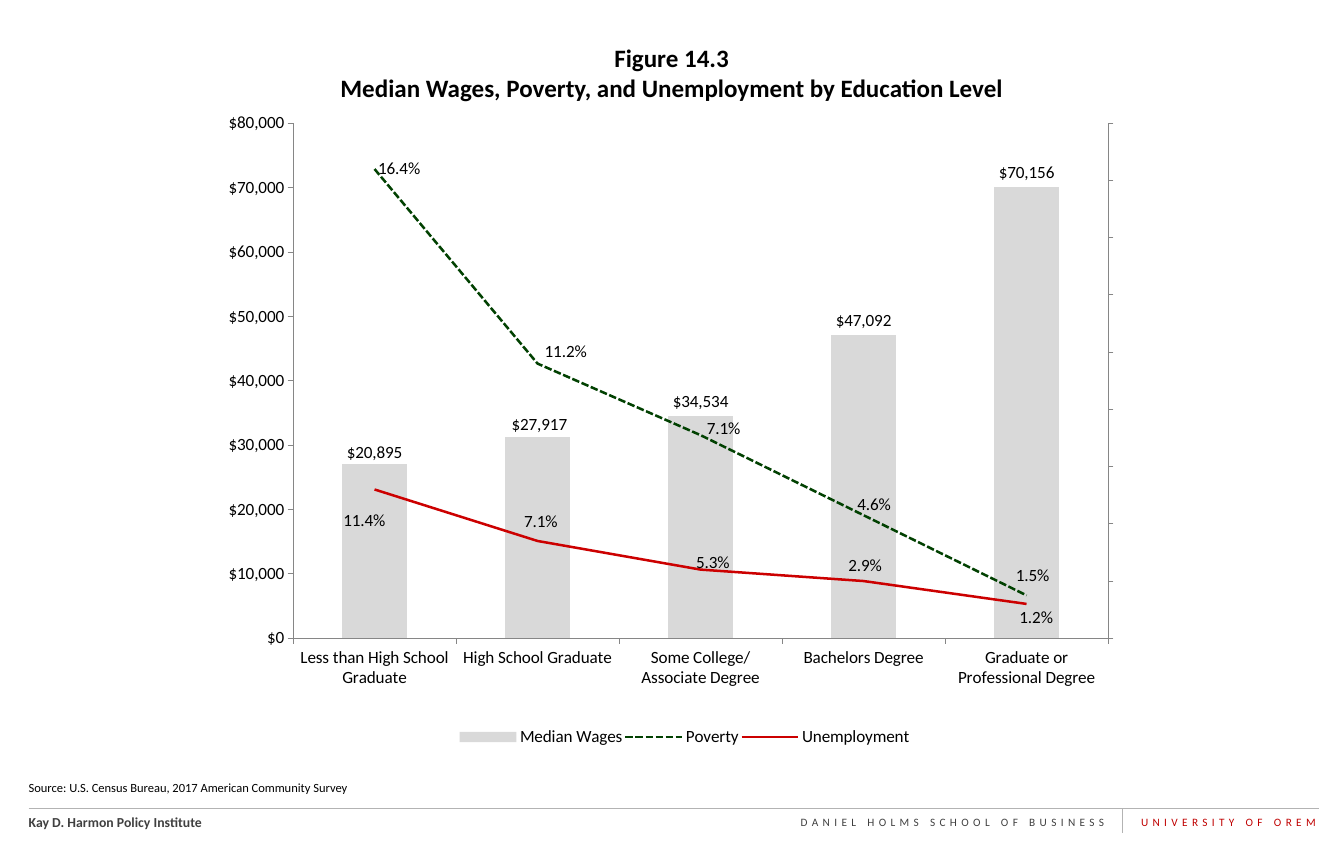
from pptx import Presentation
from pptx.chart.axis import ValueAxis
from pptx.chart.data import CategoryChartData
from pptx.dml.color import RGBColor
from pptx.enum.chart import XL_CHART_TYPE, XL_LABEL_POSITION, XL_LEGEND_POSITION, XL_MARKER_STYLE, XL_TICK_MARK
from pptx.enum.dml import MSO_LINE
from pptx.enum.shapes import MSO_CONNECTOR
from pptx.enum.text import MSO_ANCHOR, PP_ALIGN
from pptx.oxml import parse_xml
from pptx.oxml.ns import nsdecls
from pptx.util import Cm, Pt

FONT = "Calibri"
CHART_SIZE = Pt(13.7)
LAYOUT = "<c:layout %s><c:manualLayout>{}</c:manualLayout></c:layout>" % nsdecls("c")


def paint(target, color):
    target.solid()
    target.fore_color.rgb = RGBColor.from_string(color)


def write_text(box, text, size, color="000000", bold=False, align=PP_ALIGN.LEFT,
               anchor=MSO_ANCHOR.TOP, spacing=None):
    frame = box.text_frame
    frame.word_wrap = True
    frame.vertical_anchor = anchor
    para = frame.paragraphs[0]
    para.alignment = align
    for number, line in enumerate(text.split("\n")):
        if number:
            para.add_line_break()
        span = para.add_run()
        span.text = line
        span.font.name = FONT
        span.font.size = Pt(size)
        span.font.bold = bold
        paint(span.font.fill, color)
    if spacing:
        for properties in box.element.xpath(".//a:r/a:rPr"):
            properties.set("spc", str(spacing))


deck = Presentation()
deck.slide_width = Cm(37.92)
deck.slide_height = Cm(23.88)
page = deck.slides.add_slide(deck.slide_layouts[5])

title = page.shapes.title
title.left, title.top, title.width, title.height = Cm(6.25), Cm(1.35), Cm(25.4), Cm(1.37)
write_text(title, "Figure 14.3\nMedian Wages, Poverty, and Unemployment by Education Level", 20,
           bold=True, align=PP_ALIGN.CENTER, anchor=MSO_ANCHOR.MIDDLE)

footer_texts = [
    (0.56, 21.89, 13.72, 0.69, "Source: U.S. Census Bureau, 2017 American Community Survey", 10, {}),
    (0.56, 22.84, 12.5, 0.74, "Kay D. Harmon Policy Institute", 11, {"color": "404040", "bold": True}),
    (13.13, 22.89, 18.27, 0.64, "DANIEL HOLMS SCHOOL OF BUSINESS", 9,
     {"color": "404040", "align": PP_ALIGN.RIGHT, "spacing": 350}),
    (31.6, 22.89, 5.77, 0.64, "UNIVERSITY OF OREM", 9,
     {"color": "C00000", "align": PP_ALIGN.RIGHT, "spacing": 350}),
]
for left, top, width, height, text, size, style in footer_texts:
    box = page.shapes.add_textbox(Cm(left), Cm(top), Cm(width), Cm(height))
    write_text(box, text, size, **style)

for x1, y1, x2, y2 in [(0.81, 22.81, 37.21, 22.81), (31.67, 22.81, 31.67, 23.5)]:
    rule = page.shapes.add_connector(MSO_CONNECTOR.STRAIGHT, Cm(x1), Cm(y1), Cm(x2), Cm(y2))
    paint(rule.line.fill, "B3B3B3")
    rule.line.width = Pt(0.75)
    rule.element.spPr.append(parse_xml("<a:effectLst %s/>" % nsdecls("a")))

data = CategoryChartData()
data.categories = ["Less than High School Graduate", "High School Graduate",
                   "Some College/Associate Degree", "Bachelors Degree",
                   "Graduate or Professional Degree"]
data.add_series("Median Wages", [27134, 31280, 34534, 47092, 70156], '"$"#,##0')
data.add_series("Poverty", [0.164, 0.096, 0.071, 0.043, 0.015], "0.0%")
data.add_series("Unemployment", [0.052, 0.034, 0.024, 0.02, 0.012], "0.0%")
chart = page.shapes.add_chart(XL_CHART_TYPE.COLUMN_CLUSTERED, Cm(6.45), Cm(3.05),
                              Cm(25.22), Cm(18.69), data).chart
chart.has_title = False
chart.font.name = FONT
chart.font.size = CHART_SIZE
paint(chart.font.fill, "000000")

plot_area = chart.element.xpath("c:chart/c:plotArea")[0]
line_chart = parse_xml(
    '<c:lineChart %s><c:grouping val="standard"/><c:varyColors val="0"/>'
    '<c:marker val="1"/><c:axId val="501"/><c:axId val="502"/></c:lineChart>' % nsdecls("c"))
plot_area.xpath("c:barChart")[0].addnext(line_chart)
for series in plot_area.xpath("c:barChart/c:ser")[1:]:
    for flag in series.xpath("c:invertIfNegative"):
        series.remove(flag)
    line_chart.xpath("c:marker")[0].addprevious(series)

hidden_axis = parse_xml(
    '<c:catAx %s><c:axId val="501"/><c:scaling><c:orientation val="minMax"/></c:scaling>'
    '<c:delete val="1"/><c:axPos val="b"/><c:crossAx val="502"/></c:catAx>' % nsdecls("c"))
right_axis = parse_xml(
    '<c:valAx %s><c:axId val="502"/><c:scaling><c:orientation val="minMax"/><c:max val="0.18"/>'
    '<c:min val="0"/></c:scaling><c:delete val="0"/><c:axPos val="r"/>'
    '<c:numFmt formatCode="0.0%%" sourceLinked="0"/><c:majorTickMark val="out"/>'
    '<c:minorTickMark val="none"/><c:tickLblPos val="none"/><c:crossAx val="501"/>'
    '<c:crosses val="max"/><c:majorUnit val="0.02"/></c:valAx>' % nsdecls("c"))
left_axis = plot_area.xpath("c:valAx")[0]
left_axis.addnext(hidden_axis)
hidden_axis.addnext(right_axis)

for old_layout in plot_area.xpath("c:layout"):
    plot_area.remove(old_layout)
plot_area.insert(0, parse_xml(LAYOUT.format(
    '<c:layoutTarget val="inner"/><c:xMode val="edge"/><c:yMode val="edge"/>'
    '<c:x val="0.072"/><c:y val="0.023"/><c:w val="0.912"/><c:h val="0.778"/>')))

wage_axis = ValueAxis(left_axis)
wage_axis.minimum_scale, wage_axis.maximum_scale, wage_axis.major_unit = 0, 80000, 10000
wage_axis.tick_labels.number_format = '"$"#,##0'
wage_axis.tick_labels.number_format_is_linked = False
for axis in [chart.category_axis, wage_axis, ValueAxis(right_axis)]:
    axis.has_major_gridlines = False
    axis.major_tick_mark = XL_TICK_MARK.OUTSIDE
    axis.minor_tick_mark = XL_TICK_MARK.NONE
    paint(axis.format.line.fill, "868686")
    axis.format.line.width = Pt(0.75)

chart.has_legend = True
chart.legend.position = XL_LEGEND_POSITION.BOTTOM
chart.legend.include_in_layout = False
for old_layout in chart.element.xpath("c:chart/c:legend/c:layout"):
    old_layout.getparent().remove(old_layout)
chart.element.xpath("c:chart/c:legend/c:legendPos")[0].addnext(parse_xml(LAYOUT.format(
    '<c:xMode val="edge"/><c:yMode val="edge"/><c:x val="0.255"/><c:y val="0.93"/>'
    '<c:w val="0.51"/><c:h val="0.04"/>')))

bars, lines = chart.plots
bars.gap_width = 150
bars.vary_by_categories = False
wages = bars.series[0]
poverty, unemployment = lines.series
paint(wages.format.fill, "D9D9D9")
for series, color in [(poverty, "014101"), (unemployment, "CC0000")]:
    paint(series.format.line.fill, color)
    series.format.line.width = Pt(2)
    series.marker.style = XL_MARKER_STYLE.NONE
    series.smooth = False
poverty.format.line.dash_style = MSO_LINE.SQUARE_DOT

label_groups = [
    (wages, '"$"#,##0', XL_LABEL_POSITION.OUTSIDE_END,
     {0: ("$20,895", 0, 0.4), 1: ("$27,917", 0.2, 0.3)}),
    (poverty, "0.0%", XL_LABEL_POSITION.RIGHT,
     {1: ("11.2%", 0.4, -1.7), 2: (None, 0.3, -0.9), 3: ("4.6%", -1.1, -1.5), 4: (None, -1.6, -2.9)}),
    (unemployment, "0.0%", XL_LABEL_POSITION.RIGHT,
     {0: ("11.4%", -3.9, 4.7), 1: ("7.1%", -1.9, -2.9), 2: ("5.3%", -0.9, -1.1),
      3: ("2.9%", -2.1, -2.3), 4: (None, -1.2, 2.1)}),
]
for number, (series, code, position, shifted) in enumerate(label_groups):
    labels = series.data_labels
    labels.show_value = True
    labels.number_format = code
    labels.number_format_is_linked = False
    labels.position = position
    labels.font.name = FONT
    labels.font.size = CHART_SIZE
    for index, (text, right, down) in shifted.items():
        label = series.points[index].data_label
        label.position = position
        font = label.font
        if text:
            span = label.text_frame.paragraphs[0].add_run()
            span.text = text
            font = span.font
        font.name = FONT
        font.size = CHART_SIZE
        paint(font.fill, "000000")
        anchor = plot_area.xpath(
            f".//c:ser[c:idx/@val='{number}']/c:dLbls/c:dLbl/c:idx[@val='{index}']")[0]
        anchor.addnext(parse_xml(LAYOUT.format(
            f'<c:x val="{right / 100:.3f}"/><c:y val="{down / 100:.3f}"/>')))
for leader in plot_area.xpath(".//c:dLbls/c:showLeaderLines"):
    leader.set("val", "0")

deck.save("out.pptx")
